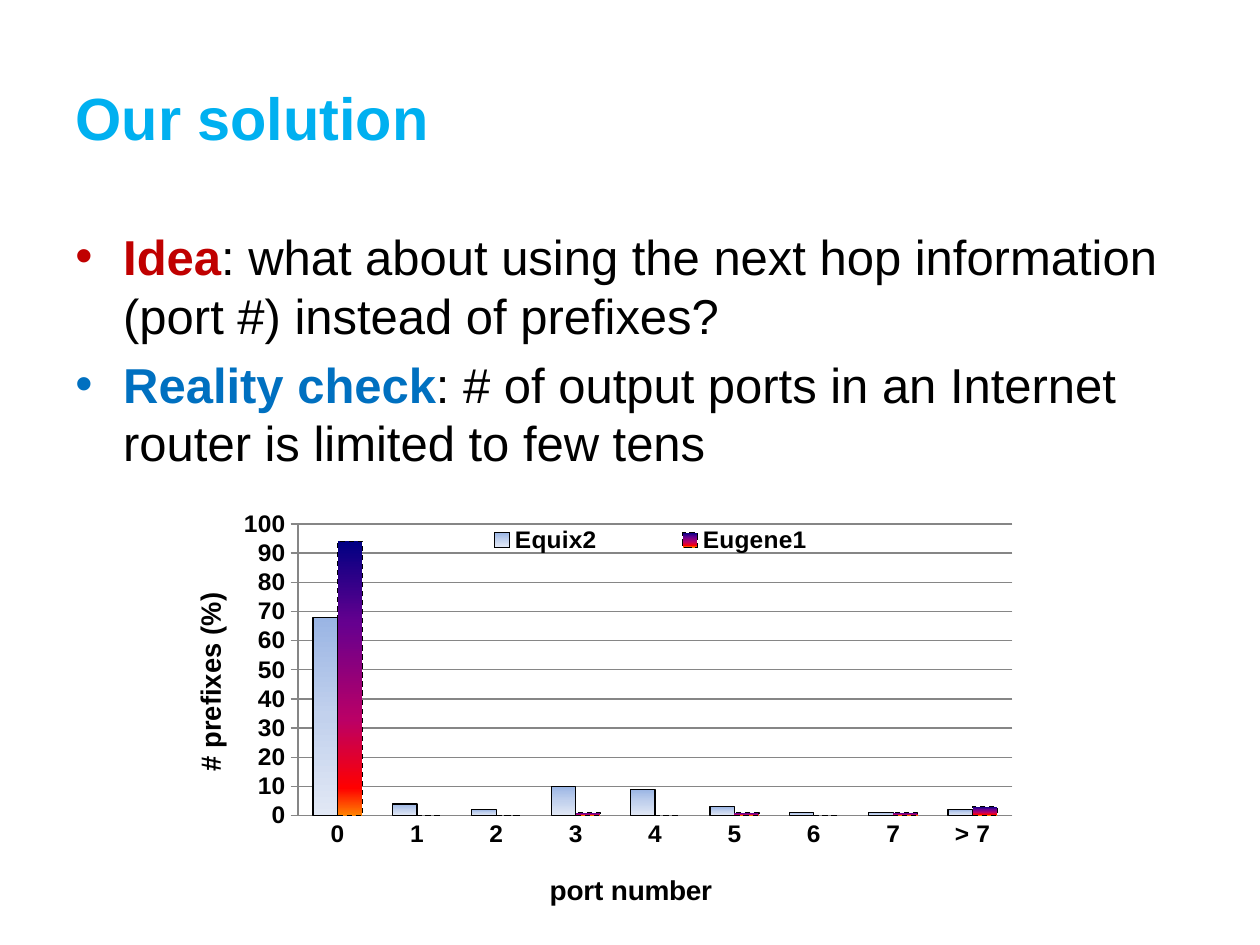
from dataclasses import dataclass
from typing import Optional

from lxml.etree import SubElement
from pptx import Presentation
from pptx.chart.data import CategoryChartData
from pptx.dml.color import RGBColor
from pptx.enum.chart import XL_CHART_TYPE as ChartType, XL_LEGEND_POSITION as LegendPosition
from pptx.enum.chart import XL_TICK_MARK as TickMark
from pptx.enum.dml import MSO_LINE_DASH_STYLE as Dash
from pptx.enum.text import MSO_ANCHOR as Anchor, PP_ALIGN as Align
from pptx.oxml import parse_xml
from pptx.oxml.ns import nsdecls, qn
from pptx.util import Inches, Pt


@dataclass(frozen=True)
class Theme:
    font: str = "Arial"
    title: str = "00B0F0"
    idea: str = "C00000"
    check: str = "0070C0"
    text: str = "000000"
    grid: str = "868686"
    title_size: int = 34
    body_size: int = 28
    axis_title_size: int = 16
    label_size: int = 14


@dataclass(frozen=True)
class Bullet:
    lead: str
    color: str
    rest: str


@dataclass(frozen=True)
class Trace:
    name: str
    shares: tuple[int, ...]
    stops: tuple[tuple[int, str], ...]
    dash: Optional[Dash] = None


THEME = Theme()
BULLETS = (
    Bullet("Idea", THEME.idea,
           ": what about using the next hop information (port #) instead of prefixes?"),
    Bullet("Reality check", THEME.check,
           ": # of output ports in an Internet router is limited to few tens"),
)
PORTS = (*map(str, range(8)), "> 7")
TRACES = (
    Trace("Equix2", (68, 4, 2, 10, 9, 3, 1, 1, 2),
          ((0, "9AB5E4"), (50, "C2D1ED"), (100, "E1E8F5"))),
    Trace("Eugene1", (94, 0, 0, 1, 0, 1, 0, 1, 3),
          ((0, "000082"), (30, "66008F"), (65, "BA0066"), (90, "FF0000"), (100, "FF8200")),
          Dash.DASH),
)


def format_font(font, *, size: int, color: str = THEME.text, bold: bool = True) -> None:
    font.name = THEME.font
    font.size = Pt(size)
    font.bold = bold
    font.color.rgb = RGBColor.from_string(color)


def add_text(para, text: str, **style) -> None:
    span = para.add_run()
    span.text = text
    format_font(span.font, **style)


def add_title(page) -> None:
    title = page.shapes.title
    title.left, title.top, title.width, title.height = map(Inches, (0.5, 0.3, 9, 1.25))
    title.text_frame.vertical_anchor = Anchor.MIDDLE
    para = title.text_frame.paragraphs[0]
    para.alignment = Align.LEFT
    add_text(para, "Our solution", size=THEME.title_size, color=THEME.title)


def add_bullets(page, bullets: tuple[Bullet, ...]) -> None:
    frame = page.shapes.add_textbox(*map(Inches, (0.5, 1.75, 9, 2.17))).text_frame
    frame.word_wrap = True
    for index, bullet in enumerate(bullets):
        para = frame.add_paragraph() if index else frame.paragraphs[0]
        para.space_before = Pt(5.6)
        properties = para._p.get_or_add_pPr()
        properties.set("marL", str(Inches(0.38)))
        properties.set("indent", str(-Inches(0.38)))
        SubElement(properties, qn("a:buFont"), typeface=THEME.font)
        SubElement(properties, qn("a:buChar"), char="•")
        add_text(para, bullet.lead, size=THEME.body_size, color=bullet.color)
        add_text(para, bullet.rest, size=THEME.body_size, bold=False)


def place(element, index: int, x: float, y: float, width: Optional[float] = None,
          height: Optional[float] = None, inner: bool = False) -> None:
    """Give a chart part a manual layout, in fractions of the chart area."""
    for old in element.findall(qn("c:layout")):
        element.remove(old)
    layout = parse_xml(f"<c:layout {nsdecls('c')}><c:manualLayout/></c:layout>")
    manual = layout[0]
    if inner:
        SubElement(manual, qn("c:layoutTarget"), val="inner")
    for mode in ("xMode", "yMode"):
        SubElement(manual, qn(f"c:{mode}"), val="edge")
    for key, value in zip("xywh", (x, y, width, height)):
        if value is not None:
            SubElement(manual, qn(f"c:{key}"), val=str(value))
    element.insert(index, layout)


def fill_gradient(series, stops: tuple[tuple[int, str], ...]) -> None:
    marks = "".join(f'<a:gs pos="{position * 1000}"><a:srgbClr val="{color}"/></a:gs>'
                    for position, color in stops)
    series.format._element.get_or_add_spPr().insert(0, parse_xml(
        f'<a:gradFill {nsdecls("a")} rotWithShape="1"><a:gsLst>{marks}</a:gsLst>'
        '<a:lin ang="5400000" scaled="0"/></a:gradFill>'))


def format_line(line, color: str) -> None:
    line.width = Pt(0.75)
    line.color.rgb = RGBColor.from_string(color)


def format_axis(axis, title: str, tick: TickMark, x: float, y: float) -> None:
    axis.major_tick_mark = tick
    axis.minor_tick_mark = TickMark.NONE
    format_font(axis.tick_labels.font, size=THEME.label_size)
    format_line(axis.format.line, THEME.grid)
    add_text(axis.axis_title.text_frame.paragraphs[0], title, size=THEME.axis_title_size)
    place(axis.axis_title._element, 1, x, y)


def add_port_chart(page) -> None:
    data = CategoryChartData(number_format="0")
    data.categories = PORTS
    for trace in TRACES:
        data.add_series(trace.name, trace.shares)
    chart = page.shapes.add_chart(ChartType.COLUMN_CLUSTERED,
                                  *map(Inches, (1.42, 4, 6.75, 3.25)), data).chart
    chart.has_title = False
    format_font(chart.font, size=18)
    place(chart._chartSpace.chart.plotArea, 0, 0.14, 0.05, 0.84, 0.73, inner=True)

    plot = chart.plots[0]
    plot.gap_width = 123
    plot.overlap = 0
    plot.vary_by_categories = False
    for series, trace in zip(plot.series, TRACES):
        fill_gradient(series, trace.stops)
        format_line(series.format.line, THEME.text)
        if trace.dash:
            series.format.line.dash_style = trace.dash

    format_axis(chart.category_axis, "port number", TickMark.NONE, 0.43, 0.91)
    values = chart.value_axis
    format_axis(values, "# prefixes (%)", TickMark.OUTSIDE, 0.01, 0.22)
    values.minimum_scale, values.maximum_scale, values.major_unit = 0, 100, 10
    values.tick_labels.number_format = "0"
    values.tick_labels.number_format_is_linked = False
    values.has_major_gridlines = True
    format_line(values.major_gridlines.format.line, THEME.grid)

    chart.has_legend = True
    chart.legend.position = LegendPosition.RIGHT
    chart.legend.include_in_layout = False
    format_font(chart.legend.font, size=THEME.label_size)
    place(chart.legend._element, 1, 0.28, 0.05, 0.55, 0.08)


def main() -> None:
    deck = Presentation()
    deck.slide_width, deck.slide_height = Inches(10), Inches(7.5)
    page = deck.slides.add_slide(deck.slide_layouts[5])
    add_title(page)
    add_bullets(page, BULLETS)
    add_port_chart(page)
    deck.save("out.pptx")


if __name__ == "__main__":
    main()
